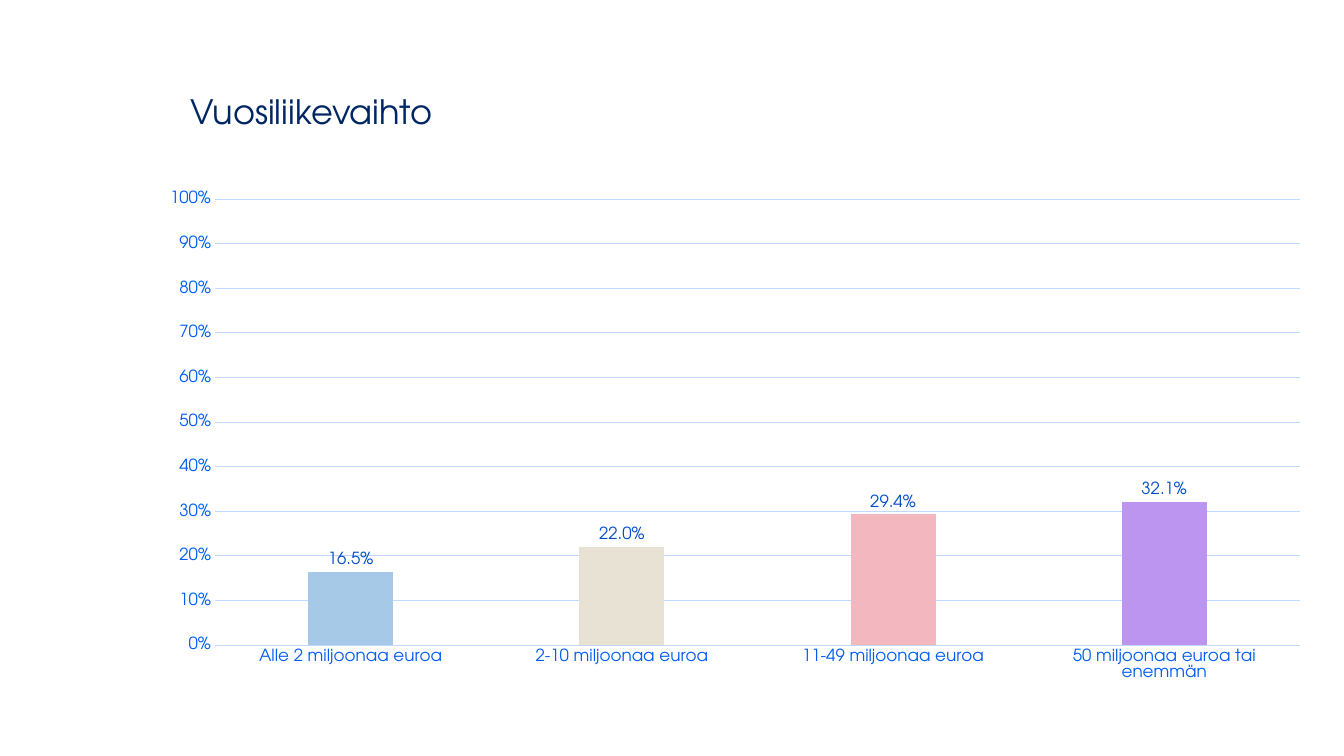
from lxml import etree
from pptx import Presentation
from pptx.chart.data import CategoryChartData
from pptx.dml.color import RGBColor
from pptx.enum.chart import XL_CHART_TYPE, XL_LABEL_POSITION, XL_TICK_MARK
from pptx.enum.text import MSO_ANCHOR
from pptx.oxml.ns import qn
from pptx.util import Inches, Pt

COLUMNS = XL_CHART_TYPE.COLUMN_CLUSTERED
OUTSIDE_END = XL_LABEL_POSITION.OUTSIDE_END
NO_TICK = XL_TICK_MARK.NONE
MIDDLE = MSO_ANCHOR.MIDDLE

FONT = "TeX Gyre Adventor"
NAVY, AXIS_BLUE, LABEL_BLUE, GRID_BLUE = "002663", "005DF3", "004DCA", "C1D9FF"

# Category, share of respondents, column colour
TURNOVER = [
    ("Alle 2 miljoonaa euroa", 0.165, "A5C9E7"),
    ("2-10 miljoonaa euroa", 0.22, "E8E2D5"),
    ("11-49 miljoonaa euroa", 0.294, "F2B7BF"),
    ("50 miljoonaa euroa tai enemmän", 0.321, "BB95EF"),
]


def rgb(color):
    return RGBColor.from_string(color)


def style_font(font, size, color):
    font.name = FONT
    font.size = Pt(size)
    font.color.rgb = rgb(color)


def style_line(line):
    line.color.rgb = rgb(GRID_BLUE)
    line.width = Pt(0.75)


def set_plot_layout(chart, x, y, w, h):
    """Fix the inner plot area as fractions of the chart."""
    area = chart.element.find(".//" + qn("c:plotArea"))
    for old in area.findall(qn("c:layout")):
        area.remove(old)
    layout = etree.Element(qn("c:layout"))
    manual = etree.SubElement(layout, qn("c:manualLayout"))
    settings = [("layoutTarget", "inner"), ("xMode", "edge"), ("yMode", "edge"),
                ("x", x), ("y", y), ("w", w), ("h", h)]
    for tag, value in settings:
        etree.SubElement(manual, qn("c:" + tag)).set("val", str(value))
    area.insert(0, layout)


def add_title(slide, text, left, top, width, height):
    box = slide.shapes.add_textbox(Inches(left), Inches(top), Inches(width), Inches(height))
    tf = box.text_frame
    tf.word_wrap = True
    tf.vertical_anchor = MIDDLE
    p = tf.paragraphs[0]
    p.text = text
    p.line_spacing = 0.9
    style_font(p.font, 24, NAVY)


def add_turnover_chart(slide, left, top, width, height):
    data = CategoryChartData()
    data.categories = [name for name, _, _ in TURNOVER]
    data.add_series("Series 1", [share for _, share, _ in TURNOVER])
    frame = slide.shapes.add_chart(
        COLUMNS, Inches(left), Inches(top), Inches(width), Inches(height), data)
    chart = frame.chart
    chart.has_title = False
    chart.has_legend = False
    style_font(chart.font, 10, NAVY)
    set_plot_layout(chart, 0.064, 0.059, 0.915, 0.879)

    # Axes
    for axis in (chart.category_axis, chart.value_axis):
        axis.major_tick_mark = NO_TICK
        axis.minor_tick_mark = NO_TICK
        style_font(axis.tick_labels.font, 12, AXIS_BLUE)
    style_line(chart.category_axis.format.line)
    shares = chart.value_axis
    shares.minimum_scale, shares.maximum_scale, shares.major_unit = 0, 1, 0.1
    shares.tick_labels.number_format = "0%"
    shares.tick_labels.number_format_is_linked = False
    shares.format.line.fill.background()
    style_line(shares.major_gridlines.format.line)

    # Columns and their labels
    plot = chart.plots[0]
    plot.vary_by_categories = False
    plot.gap_width = 219
    plot.overlap = -27
    series = plot.series[0]
    for i, (_, _, color) in enumerate(TURNOVER):
        fill = series.points[i].format.fill
        fill.solid()
        fill.fore_color.rgb = rgb(color)
    labels = series.data_labels
    labels.show_value = True
    labels.number_format = "0.0%"
    labels.number_format_is_linked = False
    labels.position = OUTSIDE_END
    style_font(labels.font, 12, LABEL_BLUE)


def main():
    prs = Presentation()
    prs.slide_width, prs.slide_height = Inches(13.33), Inches(7.5)
    slide = prs.slides.add_slide(prs.slide_layouts[6])
    add_title(slide, "Vuosiliikevaihto", 1.79, 0.4, 10.94, 1.45)
    add_turnover_chart(slide, 1.38, 1.68, 11.76, 5.07)
    prs.save("out.pptx")


if __name__ == "__main__":
    main()
